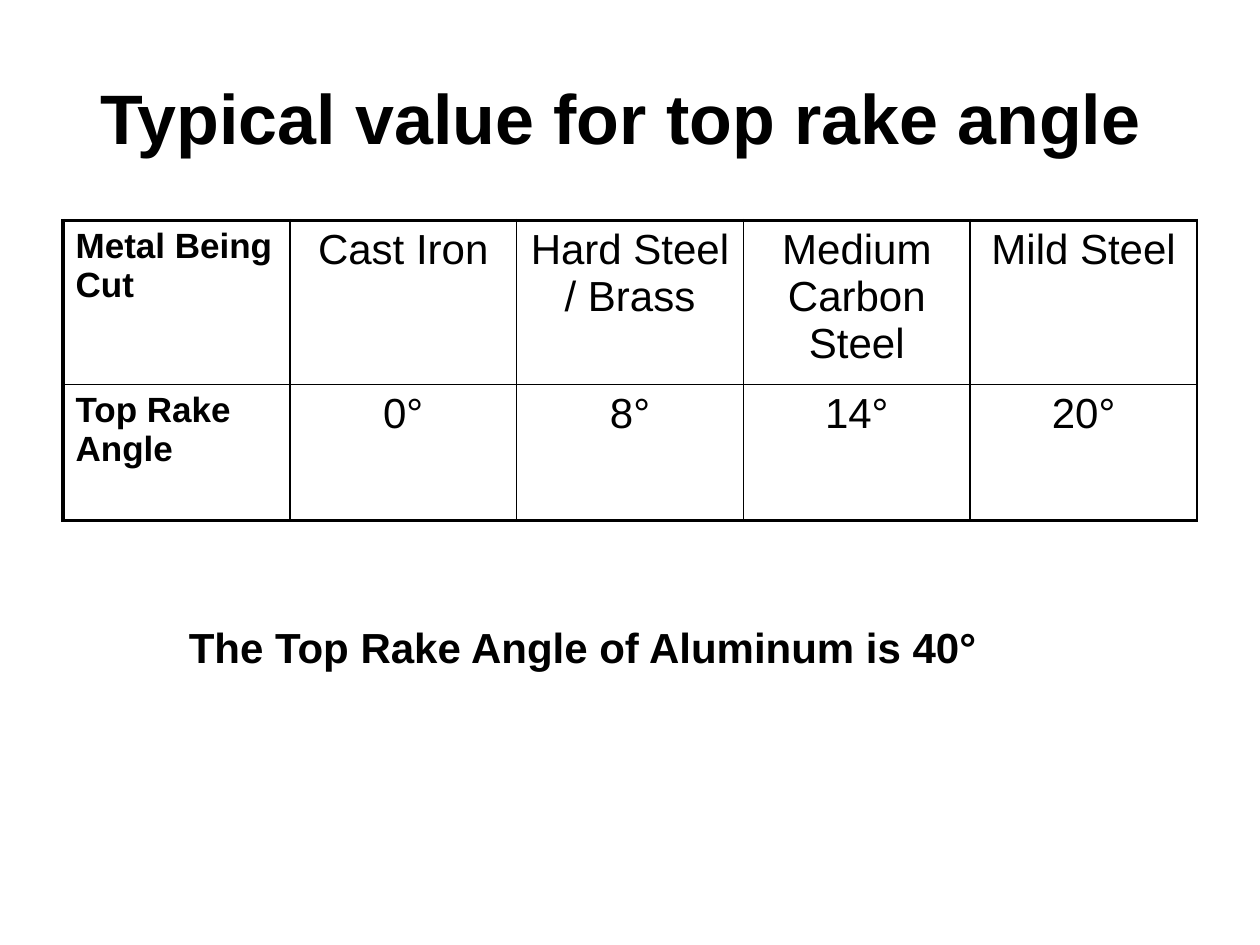
from lxml import etree
from pptx import Presentation
from pptx.dml.color import RGBColor
from pptx.enum.text import MSO_ANCHOR, PP_ALIGN as Align
from pptx.oxml.ns import qn
from pptx.util import Inches, Pt

BLACK = RGBColor(0x00, 0x00, 0x00)
THIN, THICK = Pt(1), Pt(2.25)
RAKE_ANGLES = [
    ["Metal Being Cut", "Cast Iron", "Hard Steel / Brass", "Medium Carbon Steel", "Mild Steel"],
    ["Top Rake Angle", "0°", "8°", "14°", "20°"],
]
ROW_HEIGHTS = [1.3, 1.08]


def write_text(text_frame, text, size, bold, align=Align.LEFT):
    paragraph = text_frame.paragraphs[0]
    paragraph.alignment = align
    run = paragraph.add_run()
    run.text = text
    font_format = {"name": "Arial", "size": Pt(size), "bold": bold}
    for name, value in font_format.items():
        setattr(run.font, name, value)
    run.font.color.rgb = BLACK


def set_borders(cell, widths):
    """Draw black cell borders; widths maps L, R, T, B (in that order) to a line width."""
    properties = cell._tc.get_or_add_tcPr()
    for index, (side, width) in enumerate(widths.items()):
        line = etree.Element(qn(f"a:ln{side}"), w=str(int(width)))
        fill = etree.SubElement(line, qn("a:solidFill"))
        etree.SubElement(fill, qn("a:srgbClr"), val=str(BLACK))
        properties.insert(index, line)


def add_text(slide, box, text, size, align=Align.LEFT, wrap=True, anchor=MSO_ANCHOR.TOP):
    text_frame = slide.shapes.add_textbox(*map(Inches, box)).text_frame
    text_frame.word_wrap = wrap
    text_frame.vertical_anchor = anchor
    write_text(text_frame, text, size, True, align)


def add_rake_table(slide, box):
    row_count, column_count = len(RAKE_ANGLES), len(RAKE_ANGLES[0])
    table = slide.shapes.add_table(row_count, column_count, *map(Inches, box)).table
    table.first_row = table.horz_banding = False
    for column in table.columns:
        column.width = Inches(box[2] / column_count)
    for r, (height, texts) in enumerate(zip(ROW_HEIGHTS, RAKE_ANGLES)):
        table.rows[r].height = Inches(height)
        for c, text in enumerate(texts):
            cell = table.cell(r, c)
            cell.fill.background()
            is_label = c == 0
            write_text(cell.text_frame, text, 20 if is_label else 24, is_label,
                       Align.LEFT if is_label else Align.CENTER)
            set_borders(cell, {
                "L": THICK if is_label else THIN,
                "R": THIN,
                "T": THICK if r == 0 else THIN,
                "B": THICK if r == row_count - 1 else THIN,
            })


def main():
    presentation = Presentation()
    presentation.slide_width, presentation.slide_height = Inches(10), Inches(7.5)
    slide = presentation.slides.add_slide(presentation.slide_layouts[6])
    add_text(slide, (0.5, 0.3, 9, 1.25), "Typical value for top rake angle ", 40,
             align=Align.CENTER, anchor=MSO_ANCHOR.MIDDLE)
    add_rake_table(slide, (0.5, 1.75, 9, sum(ROW_HEIGHTS)))
    add_text(slide, (1.4, 4.88, 6.59, 0.5), "The Top Rake Angle of Aluminum is 40°", 24, wrap=False)
    presentation.save("out.pptx")


if __name__ == "__main__":
    main()
